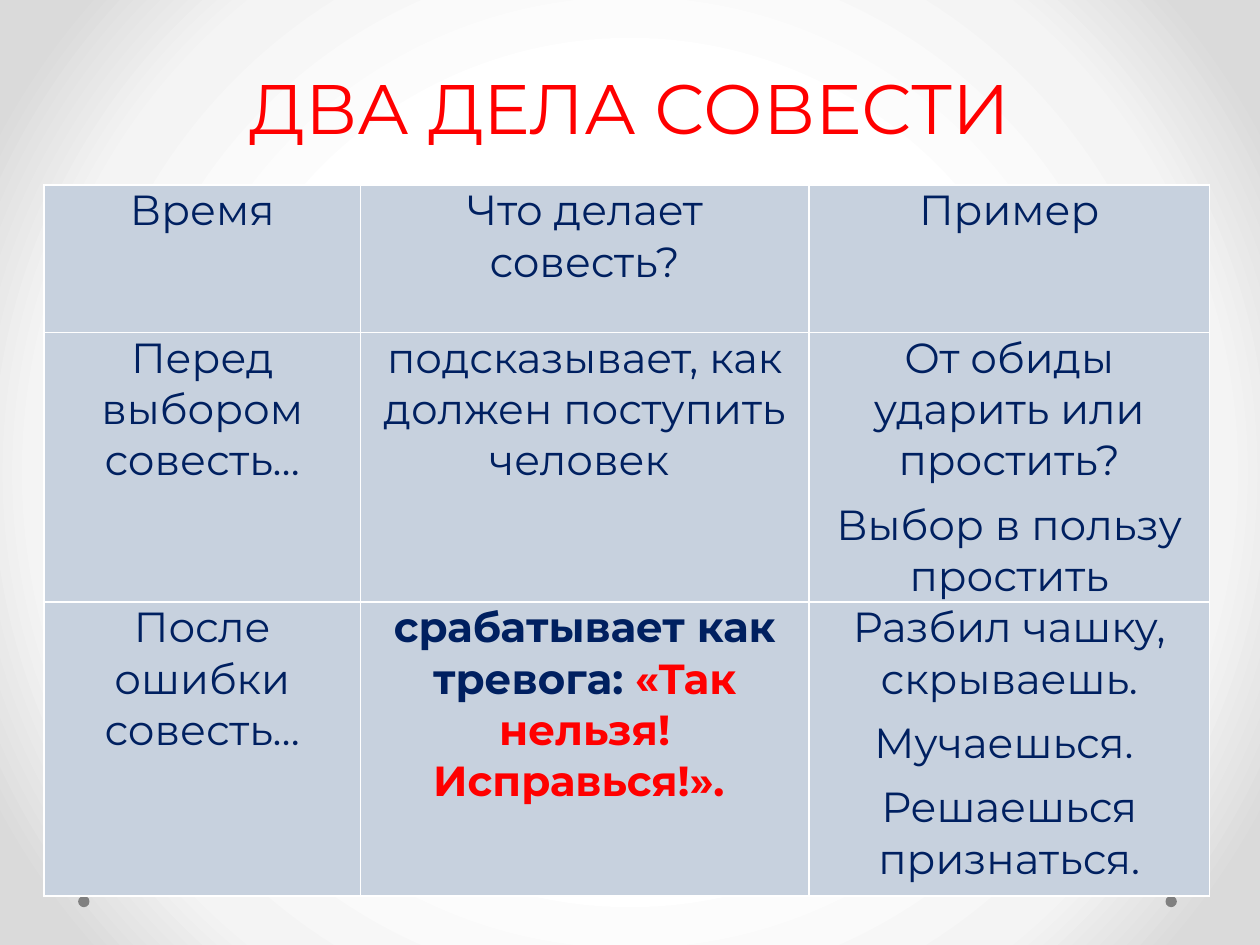
from lxml.etree import SubElement
from pptx import Presentation
from pptx.dml.color import RGBColor
from pptx.enum.shapes import MSO_SHAPE as Shape
from pptx.enum.text import MSO_ANCHOR as Anchor, MSO_AUTO_SIZE as AutoSize, PP_ALIGN as Align
from pptx.oxml import parse_xml
from pptx.oxml.ns import nsdecls, qn
from pptx.util import Inches, Pt

WIDTH, HEIGHT = Inches(10), Inches(7.5)
FONT = "Montserrat"
NAVY, RED, WHITE, CELL, GREY = "002060", "FF0000", "FFFFFF", "C7D1DE", "808080"
BACKGROUND = [(50, WHITE), (76, "F4F4F4"), (92, "DADADA")]
COLUMNS = [2.51, 3.56, 3.18]
ROWS = [1.17, 2.14, 2.33]
ALARM = [("срабатывает как тревога: ", NAVY, True),
         ("«Так нельзя! Исправься!». ", RED, True)]
CONTENT = [
    [["Время"], ["Что делает совесть?"], ["Пример"]],
    [["Перед выбором совесть…"],
     ["подсказывает, как должен поступить человек "],
     ["От обиды ударить или простить?", "Выбор в пользу простить"]],
    [["После ошибки совесть…"],
     [ALARM],
     ["Разбил чашку, скрываешь.", "Мучаешься. ", "Решаешься признаться."]],
]


def color(value):
    """Turn a hex string into a colour."""
    return RGBColor.from_string(value)


def add_run(paragraph, text, size, tint, bold=False):
    """Append one formatted run to a paragraph."""
    run = paragraph.add_run()
    run.text = text
    font = run.font
    font.name, font.size, font.bold = FONT, Pt(size), bold
    font.color.rgb = color(tint)


def paint_background(slide):
    """Fill the slide with a circular gradient."""
    fill = slide.background.fill
    fill.gradient()
    properties = slide.background._cSld.bg.bgPr
    stops = "".join(f'<a:gs pos="{place * 1000}"><a:srgbClr val="{tint}"/></a:gs>'
                    for place, tint in BACKGROUND)
    gradient = parse_xml(
        f'<a:gradFill {nsdecls("a")} rotWithShape="1"><a:gsLst>{stops}</a:gsLst>'
        '<a:path path="circle"><a:fillToRect l="50000" t="50000" r="50000" b="50000"/>'
        '</a:path></a:gradFill>')
    properties.replace(properties.find(qn("a:gradFill")), gradient)


def add_dot(slide, left):
    """Add a small grey dot near the bottom edge."""
    size = Inches(0.09)
    dot = slide.shapes.add_shape(Shape.OVAL, Inches(left), Inches(7.11), size, size)
    dot.shadow.inherit = False
    dot.fill.solid()
    dot.fill.fore_color.rgb = color(GREY)
    dot.line.fill.background()


def set_title(slide, text):
    """Place and format the title."""
    title = slide.shapes.title
    title.left, title.top = Inches(0.5), 0
    title.width, title.height = Inches(9), Inches(1.23)
    frame = title.text_frame
    frame.auto_size, frame.vertical_anchor = AutoSize.NONE, Anchor.BOTTOM
    paragraph = frame.paragraphs[0]
    paragraph.alignment, paragraph.line_spacing = Align.CENTER, Pt(58)
    add_run(paragraph, text, 40, RED)


def add_borders(cell):
    """Draw thin white lines on all four sides of a cell."""
    properties = cell._tc.get_or_add_tcPr()
    for index, side in enumerate(("lnL", "lnR", "lnT", "lnB")):
        line = parse_xml(f'<a:{side} {nsdecls("a")} w="{Pt(1)}"/>')
        SubElement(SubElement(line, qn("a:solidFill")), qn("a:srgbClr"), val=WHITE)
        properties.insert(index, line)


def fill_cell(cell, paragraphs, space_after):
    """Write the paragraphs of a cell and style it."""
    cell.margin_left = cell.margin_right = Inches(0.07)
    cell.margin_top = cell.margin_bottom = 0
    cell.fill.solid()
    cell.fill.fore_color.rgb = color(CELL)
    add_borders(cell)
    frame = cell.text_frame
    for index, content in enumerate(paragraphs):
        paragraph = frame.add_paragraph() if index else frame.paragraphs[0]
        paragraph.alignment, paragraph.space_after = Align.CENTER, Pt(space_after)
        runs = [(content, NAVY, False)] if isinstance(content, str) else content
        for text, tint, bold in runs:
            add_run(paragraph, text, 24, tint, bold)


def add_conscience_table(slide):
    """Add the table of what conscience does and when."""
    frame = slide.shapes.add_table(len(ROWS), len(COLUMNS), Inches(0.35), Inches(1.47),
                                   Inches(sum(COLUMNS)), Inches(sum(ROWS)))
    table = frame.table
    table.first_row = table.horz_banding = False
    for column, width in zip(table.columns, COLUMNS):
        column.width = Inches(width)
    for row, height, contents in zip(table.rows, ROWS, CONTENT):
        row.height = Inches(height)
        for index, (cell, paragraphs) in enumerate(zip(row.cells, contents)):
            fill_cell(cell, paragraphs, 7.5 if index else 0)


def main():
    """Build and save the slide."""
    presentation = Presentation()
    presentation.slide_width, presentation.slide_height = WIDTH, HEIGHT
    slide = presentation.slides.add_slide(presentation.slide_layouts[5])
    paint_background(slide)
    for left in (9.25, 0.62):
        add_dot(slide, left)
    set_title(slide, "ДВА ДЕЛА СОВЕСТИ")
    add_conscience_table(slide)
    presentation.save("out.pptx")


if __name__ == "__main__":
    main()
